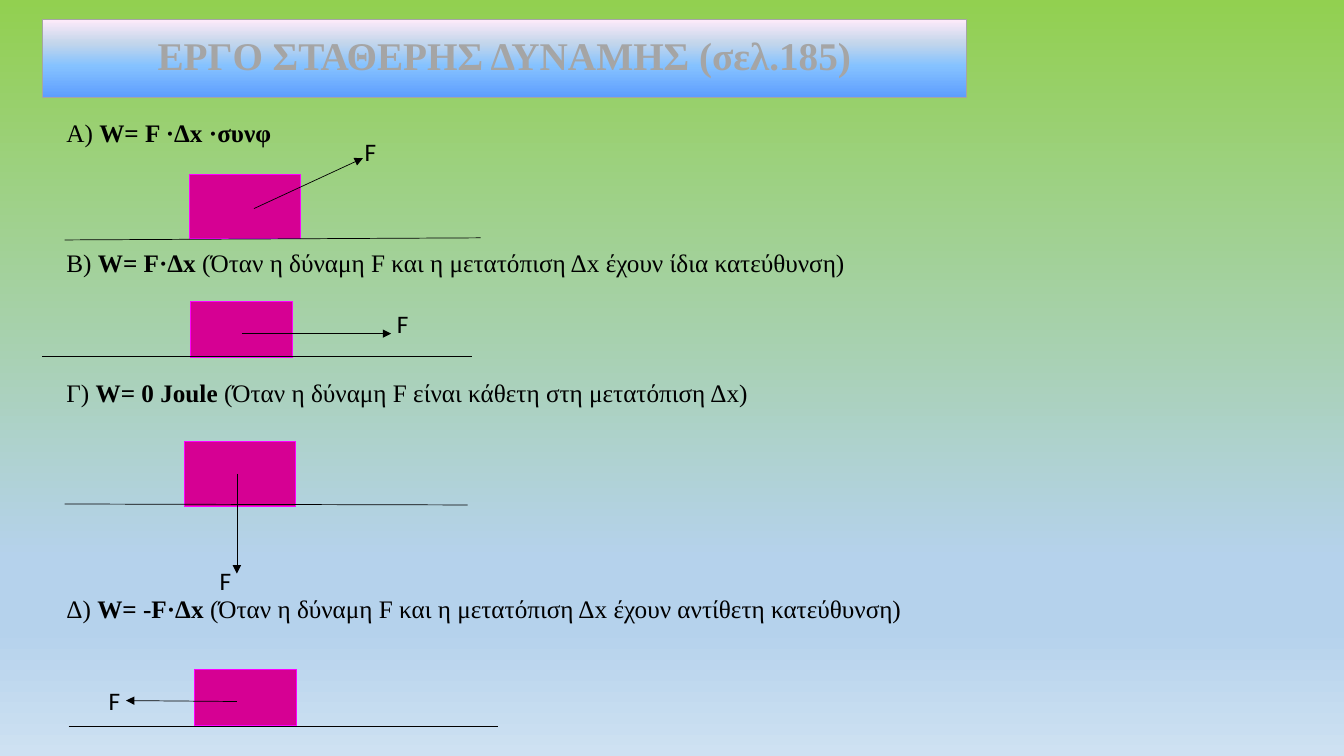
from dataclasses import dataclass

from lxml import etree
from pptx import Presentation
from pptx.dml.color import RGBColor
from pptx.enum.shapes import MSO_CONNECTOR, MSO_SHAPE
from pptx.enum.text import MSO_ANCHOR, PP_ALIGN
from pptx.oxml.ns import qn
from pptx.util import Pt

STRAIGHT = MSO_CONNECTOR.STRAIGHT
RECTANGLE = MSO_SHAPE.RECTANGLE
MIDDLE = MSO_ANCHOR.MIDDLE
CENTER = PP_ALIGN.CENTER

COLORS = {
    "text": "000000",
    "block": "D60093",
    "block_edge": "FF00FF",
    "title": "A5A5A5",
}
BACKGROUND_STOPS = [(0, "92D050"), (74, "B5D2EC"), (83, "B5D2EC"), (100, "CEE1F2")]
TITLE_STOPS = [(0, "5E9EFF"), (40, "85C2FF"), (70, "C4D6EB"), (100, "FFEBFA")]

SERIF = "Times New Roman"
BODY_FORMAT = {"name": SERIF, "size": Pt(18)}
LABEL_FORMAT = {"name": "Calibri", "size": Pt(18)}
TITLE_FORMAT = {"name": SERIF, "size": Pt(28), "bold": True}

Point = tuple[float, float]
Box = tuple[float, float, float, float]


@dataclass
class WorkCase:
    """One formula with its sketch of a block, the ground and the force."""
    letter: str
    formula: str
    condition: str
    space_before: float
    block: Box
    ground: tuple[Point, Point]
    force: tuple[Point, Point]
    label: Point


CASES = [
    WorkCase("A) ", "W= F ·Δx ·συνφ", "", 0,
             (135.4, 124.6, 79.2, 46.1), ((46.1, 171.4), (343.4, 169.9)),
             ((181.4, 149), (259.2, 113)), (253.4, 93.6)),
    WorkCase("B) ", "W= F·Δx ", "(Όταν η δύναμη F και η μετατόπιση Δx έχουν ίδια κατεύθυνση)", 71,
             (136.1, 215.3, 72.7, 40.3), ((30.2, 254.9), (337, 254.9)),
             ((172.8, 238.3), (279.4, 238.3)), (276.5, 216.7)),
    WorkCase("Γ) ", "W= 0 Joule ", "(Όταν η δύναμη F είναι κάθετη στη μετατόπιση Δx)", 71,
             (131.8, 315.4, 79.2, 46.1), ((46.1, 360), (334.1, 360.7)),
             ((169.2, 338.4), (169.2, 409.7)), (149.8, 400.3)),
    WorkCase("Δ) ", "W= -F·Δx ", "(Όταν η δύναμη F και η μετατόπιση Δx έχουν αντίθετη κατεύθυνση)", 133,
             (139, 478.1, 72.7, 40.3), ((49, 519.1), (355.7, 519.1)),
             ((169.2, 501.1), (90, 500.4)), (70.6, 486)),
]


def set_gradient(fill, element, stops: list[tuple[int, str]], angle: float) -> None:
    fill.gradient()
    fill.gradient_angle = angle
    stop_list = next(element.iter(qn("a:gsLst")))
    for stop in list(stop_list):
        stop_list.remove(stop)
    for position, color in stops:
        stop = etree.SubElement(stop_list, qn("a:gs"), pos=str(position * 1000))
        etree.SubElement(stop, qn("a:srgbClr"), val=color)


def add_run(paragraph, text: str, formats: dict, color: str, **extra) -> None:
    run = paragraph.add_run()
    run.text = text
    for attribute, value in {**formats, **extra}.items():
        setattr(run.font, attribute, value)
    run.font.color.rgb = RGBColor.from_string(COLORS[color])


def add_text_box(slide, box: Box):
    frame = slide.shapes.add_textbox(*map(Pt, box)).text_frame
    frame.word_wrap = True
    return frame


def add_rectangle(slide, box: Box, edge: str, width: float):
    shape = slide.shapes.add_shape(RECTANGLE, *map(Pt, box))
    shape.shadow.inherit = False
    shape.line.color.rgb = RGBColor.from_string(COLORS[edge])
    shape.line.width = Pt(width)
    return shape


def add_line(slide, ends: tuple[Point, Point], arrow: bool = False) -> None:
    start, end = ends
    connector = slide.shapes.add_connector(STRAIGHT, *map(Pt, start + end))
    connector.line.color.rgb = RGBColor.from_string(COLORS["text"])
    connector.line.width = Pt(0.5)
    properties = connector.element.spPr
    etree.SubElement(properties, qn("a:effectLst"))
    if arrow:
        etree.SubElement(properties.find(qn("a:ln")), qn("a:tailEnd"), type="triangle")


def add_formulas(slide) -> None:
    frame = add_text_box(slide, (40.3, 80.6, 829.4, 443.5))
    for index, case in enumerate(CASES):
        paragraph = frame.add_paragraph() if index else frame.paragraphs[0]
        paragraph.space_before = Pt(case.space_before)
        add_run(paragraph, case.letter, BODY_FORMAT, "text")
        add_run(paragraph, case.formula, BODY_FORMAT, "text", bold=True)
        if case.condition:
            add_run(paragraph, case.condition, BODY_FORMAT, "text")


def add_sketch(slide, case: WorkCase) -> None:
    block = add_rectangle(slide, case.block, "block_edge", 0.75)
    block.fill.solid()
    block.fill.fore_color.rgb = RGBColor.from_string(COLORS["block"])
    add_line(slide, case.ground)
    add_line(slide, case.force, arrow=True)
    label = add_text_box(slide, case.label + (25.9, 28.8))
    add_run(label.paragraphs[0], "F", LABEL_FORMAT, "text")


def add_title(slide) -> None:
    title = add_rectangle(slide, (30.2, 13.9, 660, 55.4), "title", 0.5)
    set_gradient(title.fill, title.element, TITLE_STOPS, 90)
    frame = title.text_frame
    frame.word_wrap = False
    frame.vertical_anchor = MIDDLE
    paragraph = frame.paragraphs[0]
    paragraph.alignment = CENTER
    paragraph.line_spacing = 0.9
    add_run(paragraph, "ΕΡΓΟ ΣΤΑΘΕΡΗΣ ΔΥΝΑΜΗΣ (σελ.185)", TITLE_FORMAT, "title")


def main() -> None:
    presentation = Presentation()
    presentation.slide_width = Pt(960)
    presentation.slide_height = Pt(540)
    slide = presentation.slides.add_slide(presentation.slide_layouts[6])

    # Background
    set_gradient(slide.background.fill, slide.element, BACKGROUND_STOPS, 270)

    # Formulas and sketches
    add_formulas(slide)
    for case in CASES:
        add_sketch(slide, case)

    # Title bar
    add_title(slide)
    presentation.save("out.pptx")


if __name__ == "__main__":
    main()
